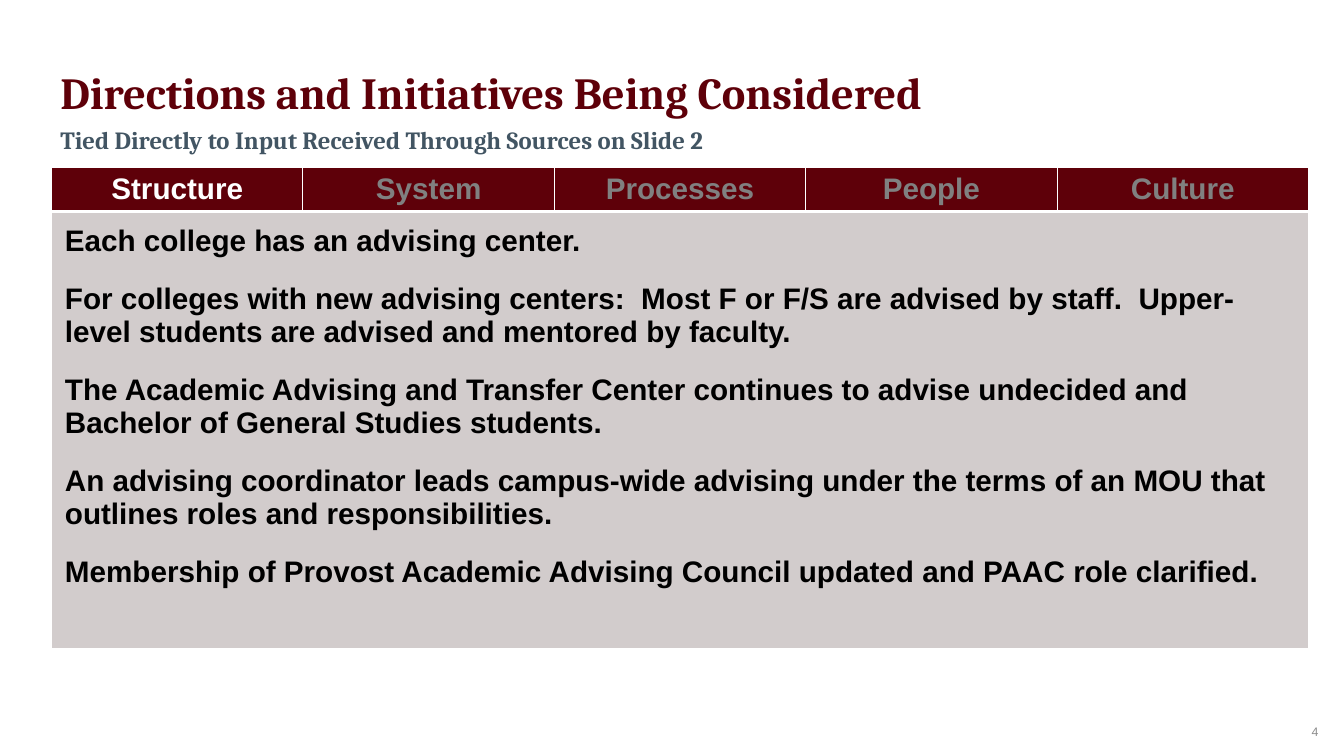
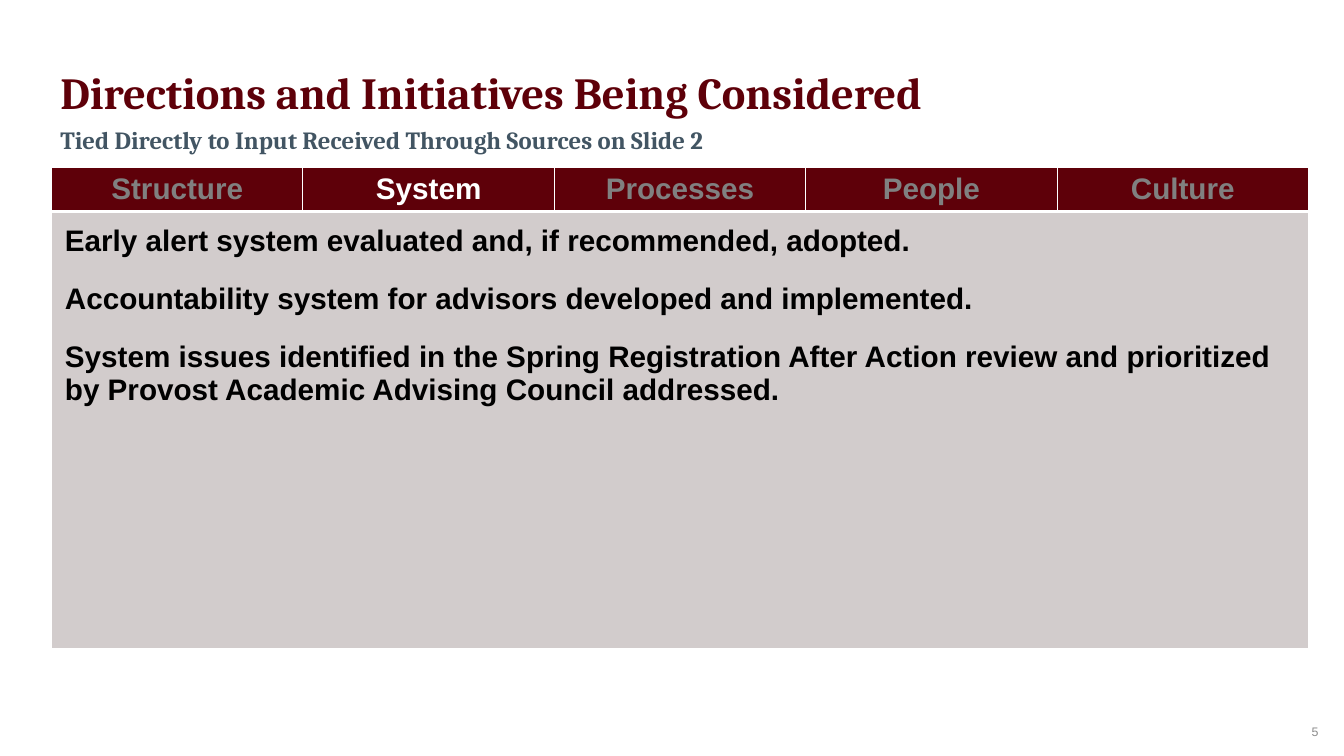
import pptx
import pptx.util
import pptx.dml.color
import pptx.enum.text
from lxml import etree
from pptx.oxml.ns import qn

Inches = pptx.util.Inches
Pt = pptx.util.Pt
RGB = pptx.dml.color.RGBColor.from_string
ALIGN = pptx.enum.text.PP_ALIGN
ANCHOR = pptx.enum.text.MSO_ANCHOR

TITLE = "Directions and Initiatives Being Considered"
SUB = "Tied Directly to Input Received Through Sources on Slide 2"
TABS = ["Structure", "System", "Processes", "People", "Culture"]
FIRST = 4
SLIDES = [
    ("Structure", [
        "Each college has an advising center.",
        "For colleges with new advising centers:  Most F or F/S are advised by "
        "staff.  Upper-level students are advised and mentored by faculty.",
        "The Academic Advising and Transfer Center continues to advise "
        "undecided and Bachelor of General Studies students.",
        "An advising coordinator leads campus-wide advising under the terms of "
        "an MOU that outlines roles and responsibilities.",
        "Membership of Provost Academic Advising Council updated and PAAC role "
        "clarified.",
    ]),
    ("System", [
        "Early alert system evaluated and, if recommended, adopted.",
        "Accountability system for advisors developed and implemented.",
        "System issues identified in the Spring Registration After Action "
        "review and prioritized by Provost Academic Advising Council addressed.",
    ]),
]

BAND, PANEL, RULE = "5E0009", "D2CCCC", "FFFFFF"
THEME = {
    "title": {"name": "Cambria", "size": Pt(36), "bold": True, "color": BAND},
    "sub": {"name": "Cambria", "size": Pt(20), "bold": True, "color": "425563"},
    "on": {"name": "Arial", "size": Pt(24), "bold": True, "color": "FFFFFF"},
    "off": {"name": "Arial", "size": Pt(24), "bold": True, "color": "808080"},
    "body": {"name": "Arial", "size": Pt(24), "bold": True, "color": "000000"},
    "num": {"name": "Arial", "size": Pt(10), "bold": False, "color": "8C8C8C"},
}
GAP = Pt(20)
LEFT, TOP, WIDTH = 0.58, 1.88, 14.13
ROWS = (0.49, 4.91)
INSET = 0.15


def write(frame, lines, style, align=ALIGN.LEFT):
    for i, line in enumerate(lines):
        para = frame.paragraphs[0] if i == 0 else frame.add_paragraph()
        para.alignment = align
        if i < len(lines) - 1:
            para.space_after = GAP
        run = para.add_run()
        run.text = line
        for key, value in THEME[style].items():
            if key == "color":
                run.font.color.rgb = RGB(value)
            else:
                setattr(run.font, key, value)


def add_text(slide, text, style, box, wrap=True, **form):
    frame = slide.shapes.add_textbox(*map(Inches, box)).text_frame
    frame.word_wrap = wrap
    frame.vertical_anchor = form.pop("anchor", ANCHOR.TOP)
    write(frame, [text], style, **form)


def paint(cell, fill, top, base):
    """Fill a cell and rule its edges; top and base are widths in points."""
    cell.fill.solid()
    cell.fill.fore_color.rgb = RGB(fill)
    props = cell._tc.get_or_add_tcPr()
    edges = {"a:lnL": 1, "a:lnR": 1, "a:lnT": top, "a:lnB": base}
    for i, (tag, width) in enumerate(edges.items()):
        line = etree.Element(qn(tag), w=str(Pt(width)))
        solid = etree.SubElement(line, qn("a:solidFill"))
        etree.SubElement(solid, qn("a:srgbClr"), val=RULE)
        props.insert(i, line)


def add_grid(slide, active, points):
    box = map(Inches, (LEFT, TOP, WIDTH, sum(ROWS)))
    table = slide.shapes.add_table(2, len(TABS), *box).table
    for row, height in zip(table.rows, ROWS):
        row.height = Inches(height)
    for col, tab in enumerate(TABS):
        table.columns[col].width = Inches(WIDTH / len(TABS))
        head = table.cell(0, col)
        head.vertical_anchor = ANCHOR.MIDDLE
        write(head.text_frame, [tab], "on" if tab == active else "off",
              ALIGN.CENTER)
        paint(head, BAND, 1, 3)
        paint(table.cell(1, col), PANEL, 3, 1)
    body = table.cell(1, 0)
    body.merge(table.cell(1, len(TABS) - 1))
    for side in ("left", "top", "right", "bottom"):
        setattr(body, "margin_" + side, Inches(INSET))
    write(body.text_frame, points, "body")


def main():
    deck = pptx.Presentation()
    deck.slide_width, deck.slide_height = Inches(15.11), Inches(8.5)
    for num, (active, points) in enumerate(SLIDES, FIRST):
        slide = deck.slides.add_slide(deck.slide_layouts[6])
        add_text(slide, str(num), "num", (14.44, 8.09, 0.48, 0.28),
                 align=ALIGN.RIGHT, anchor=ANCHOR.MIDDLE)
        add_text(slide, TITLE, "title", (LEFT, 0.68, 11.54, 0.71))
        add_text(slide, SUB, "sub", (LEFT, 1.35, 13.86, 0.44))
        add_grid(slide, active, points)
    deck.save("out.pptx")


if __name__ == "__main__":
    main()
